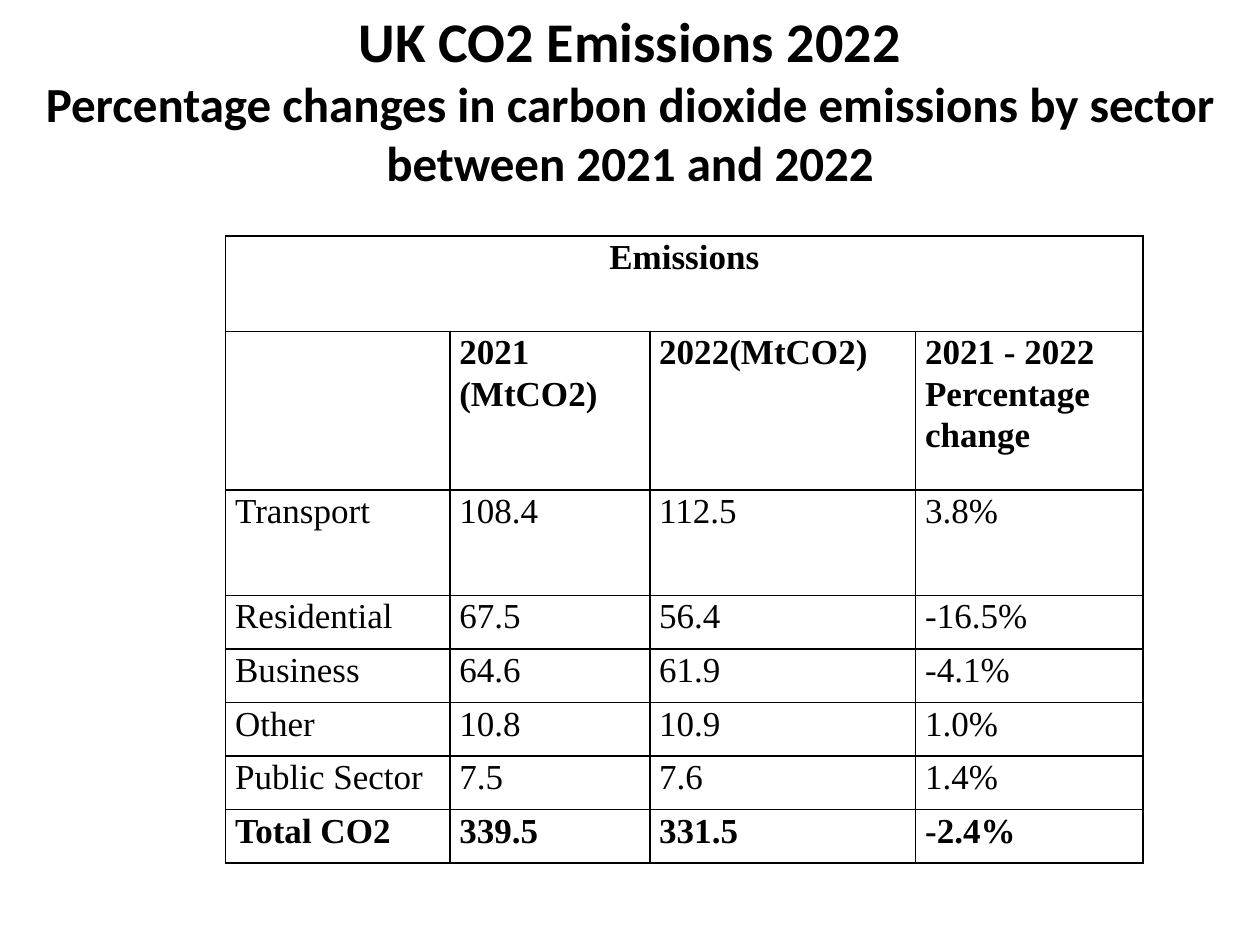
from dataclasses import dataclass

from lxml import etree
from pptx import Presentation
from pptx.dml.color import RGBColor
from pptx.enum.text import MSO_ANCHOR, PP_ALIGN
from pptx.oxml.ns import qn
from pptx.util import Cm, Pt

CENTER, LEFT = PP_ALIGN.CENTER, PP_ALIGN.LEFT
TOP = MSO_ANCHOR.TOP


@dataclass(frozen=True)
class Theme:
    ink: str = "000000"
    heading_font: str = "Calibri"
    table_font: str = "Times New Roman"
    title_size: int = 32
    subtitle_size: int = 28
    table_size: int = 20
    line_spacing: float = 1.06
    border: float = 1


class SlideBuilder:
    def __init__(self, slide, theme):
        self.slide = slide
        self.theme = theme

    def format_runs(self, paragraph, font, size, bold, align):
        paragraph.alignment = align
        for run in paragraph.runs:
            run.font.name = font
            run.font.size = Pt(size)
            run.font.bold = bold
            run.font.color.rgb = RGBColor.from_string(self.theme.ink)

    def heading(self, left, top, width, height, lines):
        box = self.slide.shapes.add_textbox(Cm(left), Cm(top), Cm(width), Cm(height))
        frame = box.text_frame
        frame.word_wrap = True
        frame.vertical_anchor = TOP
        frame.text = "\n".join(text for text, _ in lines)
        for paragraph, (_, size) in zip(frame.paragraphs, lines):
            self.format_runs(paragraph, self.theme.heading_font, size, True, CENTER)

    def cell_borders(self, cell):
        properties = cell._tc.get_or_add_tcPr()
        for position, side in enumerate(("a:lnL", "a:lnR", "a:lnT", "a:lnB")):
            line = etree.Element(qn(side), w=str(Pt(self.theme.border)))
            fill = etree.SubElement(line, qn("a:solidFill"))
            etree.SubElement(fill, qn("a:srgbClr"), val=self.theme.ink)
            properties.insert(position, line)

    def table(self, left, top, widths, heights, rows, bold_rows):
        grid = self.slide.shapes.add_table(
            len(heights), len(widths), Cm(left), Cm(top),
            Cm(sum(widths)), Cm(sum(heights))).table
        grid.first_row = grid.horz_banding = False
        for column, width in zip(grid.columns, widths):
            column.width = Cm(width)
        for row, height in zip(grid.rows, heights):
            row.height = Cm(height)

        for r, texts in enumerate(rows):
            # A row with a single text spans the whole table
            spanning = len(texts) == 1
            if spanning:
                grid.cell(r, 0).merge(grid.cell(r, len(widths) - 1))
            for c in range(len(widths)):
                cell = grid.cell(r, c)
                cell.fill.background()
                self.cell_borders(cell)
                cell.margin_left = cell.margin_right = Cm(0.19)
                cell.margin_top = cell.margin_bottom = 0
            for c, text in enumerate(texts):
                paragraph = grid.cell(r, c).text_frame.paragraphs[0]
                paragraph.text = text
                paragraph.line_spacing = self.theme.line_spacing
                self.format_runs(paragraph, self.theme.table_font,
                                 self.theme.table_size, r in bold_rows,
                                 CENTER if spanning else LEFT)


EMISSIONS = [
    ["Emissions"],
    ["", "2021 (MtCO2)", "2022(MtCO2)", "2021 - 2022 Percentage change"],
    ["Transport", "108.4", "112.5", "3.8%"],
    ["Residential", "67.5", "56.4", "-16.5%"],
    ["Business", "64.6", "61.9", "-4.1%"],
    ["Other", "10.8", "10.9", "1.0%"],
    ["Public Sector", "7.5", "7.6", "1.4%"],
    ["Total CO2", "339.5", "331.5", "-2.4%"],
]


def main():
    presentation = Presentation()
    presentation.slide_width, presentation.slide_height = Cm(25.4), Cm(19.05)
    theme = Theme()
    builder = SlideBuilder(
        presentation.slides.add_slide(presentation.slide_layouts[6]), theme)

    # Emissions by sector, with headings and total in bold
    builder.table(4.55, 4.76, [4.52, 4.03, 5.36, 4.58],
                  [1.92, 3.2, 2.12] + [1.08] * 5,
                  EMISSIONS, bold_rows={0, 1, len(EMISSIONS) - 1})

    # Title and subtitle
    builder.heading(0, 0, 25.4, 4.78, [
        ("UK CO2 Emissions 2022", theme.title_size),
        ("Percentage changes in carbon dioxide emissions by sector "
         "between 2021 and 2022", theme.subtitle_size),
    ])

    presentation.save("out.pptx")


if __name__ == "__main__":
    main()
